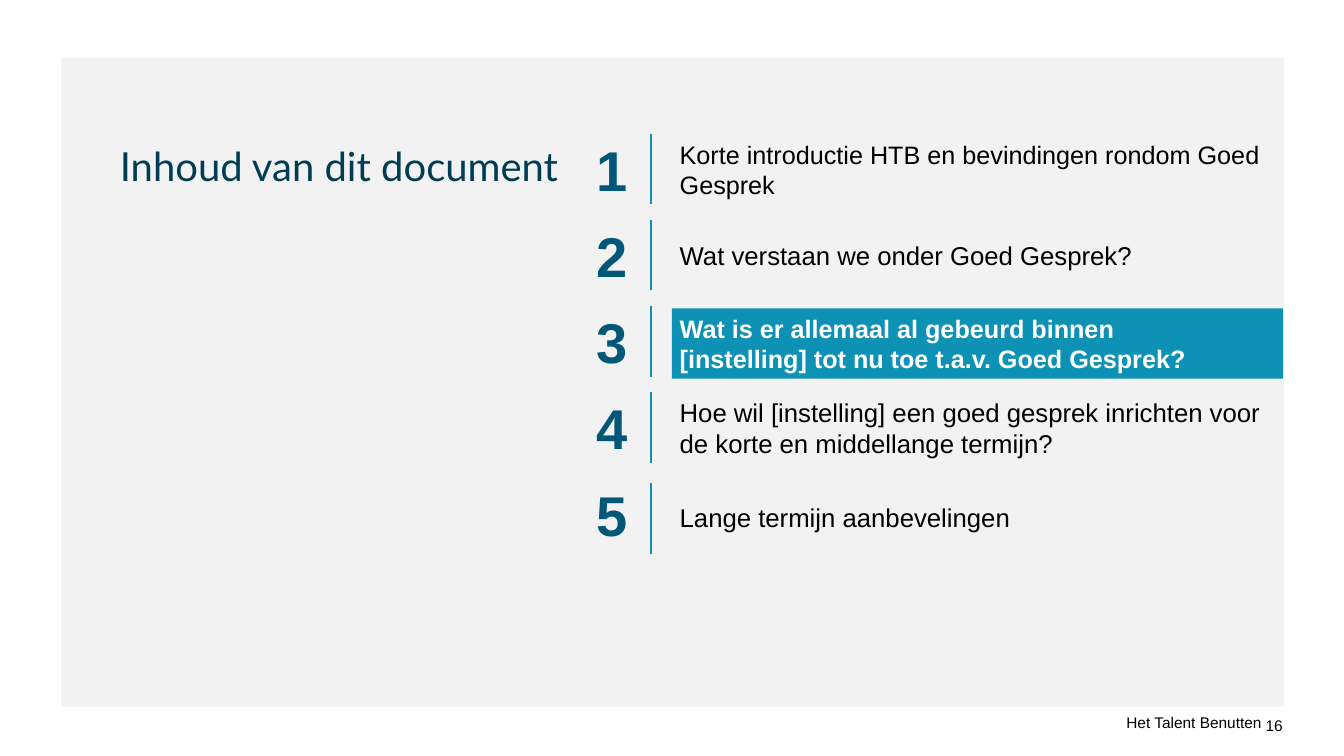
import pptx
import pptx.dml.color
import pptx.enum.shapes
import pptx.enum.text
import pptx.oxml
import pptx.util
from pptx.util import Cm

COLOURS = {
    "panel": "F2F2F2",
    "title": "003C54",
    "number": "005777",
    "accent": "0D92B6",
    "text": "000000",
    "active": "FFFFFF",
}
HARD_SPACE = chr(160)
TITLE = "Inhoud van dit document"
FOOTER = "Het Talent Benutten"
PAGE_NUMBER = "16"
ACTIVE_CHAPTER = 3
CHAPTERS = [
    {"text": "Korte introductie HTB en bevindingen rondom Goed Gesprek", "size": 18},
    {"text": "Wat verstaan we onder Goed Gesprek?", "size": 18.4},
    {"text": f"Wat is er allemaal al gebeurd{HARD_SPACE}binnen "
             f"[instelling]{HARD_SPACE}tot nu toe t.a.v. Goed Gesprek?",
     "size": 18, "label_drop": 0.05},
    {"text": "Hoe wil [instelling] een goed gesprek inrichten voor de korte en middellange termijn?",
     "size": 18.4},
    {"text": "Lange termijn aanbevelingen", "size": 18.4, "label_drop": 0.1, "line_drop": 0.12},
]

FIRST_TOP = 3.38
PITCH = 2.17
ROW_HEIGHT = 1.77
NUMBER_LEFT, NUMBER_WIDTH, NUMBER_HEIGHT = 14.8, 1.25, 1.35
LINE_LEFT = 16.41
LABEL_LEFT, LABEL_WIDTH = 16.93, 15.4

ALIGN = pptx.enum.text.PP_ALIGN
ANCHOR = pptx.enum.text.MSO_ANCHOR


def colour(name):
    return pptx.dml.color.RGBColor.from_string(COLOURS[name])


def write(shape, text, size, ink, font="Arial", bold=False, align=ALIGN.LEFT,
          anchor=ANCHOR.MIDDLE, inset=0, wrap=True):
    frame = shape.text_frame
    frame.text = text
    frame.word_wrap = wrap
    frame.auto_size = pptx.enum.text.MSO_AUTO_SIZE.NONE
    frame.vertical_anchor = anchor
    frame.margin_left = frame.margin_right = Cm(inset)
    frame.margin_top = frame.margin_bottom = Cm(inset)
    para = frame.paragraphs[0]
    para.alignment = align
    for span in para.runs:
        span.font.name = font
        span.font.size = pptx.util.Pt(size)
        span.font.bold = bold
        span.font.color.rgb = colour(ink)


def add_block(page, left, top, width, height, fill):
    block = page.shapes.add_shape(pptx.enum.shapes.MSO_SHAPE.RECTANGLE,
                                  Cm(left), Cm(top), Cm(width), Cm(height))
    block.shadow.inherit = False
    block.fill.solid()
    block.fill.fore_color.rgb = colour(fill)
    block.line.fill.background()
    return block


def add_box(page, left, top, width, height):
    return page.shapes.add_textbox(Cm(left), Cm(top), Cm(width), Cm(height))


def add_divider(page, top):
    divider = page.shapes.add_connector(
        pptx.enum.shapes.MSO_CONNECTOR.STRAIGHT,
        Cm(LINE_LEFT), Cm(top + ROW_HEIGHT), Cm(LINE_LEFT), Cm(top))
    divider.line.color.rgb = colour("accent")
    divider.line.width = pptx.util.Pt(1.5)
    properties = divider._element.spPr
    properties.append(pptx.oxml.parse_xml(
        '<a:effectLst xmlns:a="http://schemas.openxmlformats.org/drawingml/2006/main"/>'))


def add_chapter(page, number, chapter):
    top = FIRST_TOP + (number - 1) * PITCH
    number_top = top + (ROW_HEIGHT - NUMBER_HEIGHT) / 2
    number_box = add_box(page, NUMBER_LEFT, number_top, NUMBER_WIDTH, NUMBER_HEIGHT)
    write(number_box, str(number), 40, "number", bold=True, align=ALIGN.CENTER, wrap=False)
    add_divider(page, top + chapter.get("line_drop", 0))
    place = (LABEL_LEFT, top + chapter.get("label_drop", 0), LABEL_WIDTH, ROW_HEIGHT)
    active = number == ACTIVE_CHAPTER
    label = add_block(page, *place, "accent") if active else add_box(page, *place)
    write(label, chapter["text"], chapter["size"], "active" if active else "text",
          bold=active, inset=0.2)


def main():
    deck = pptx.Presentation()
    deck.slide_width, deck.slide_height = Cm(33.87), Cm(19.05)
    page = deck.slides.add_slide(deck.slide_layouts[5])

    panel = add_block(page, 1.55, 1.45, 30.81, 16.36, "panel")
    title = page.shapes.title
    title._element.addprevious(panel._element)
    title.left, title.top, title.width, title.height = Cm(3.02), Cm(3.56), Cm(11.13), Cm(1.07)
    write(title, TITLE, 28.6, "title", font="Lato", anchor=ANCHOR.TOP)

    for number, chapter in enumerate(CHAPTERS, 1):
        add_chapter(page, number, chapter)

    footer = add_box(page, 27.7, 17.96, 4.1, 0.48)
    write(footer, FOOTER, 11, "text", align=ALIGN.RIGHT, anchor=ANCHOR.BOTTOM)
    page_number = add_box(page, 31.85, 18.03, 0.48, 0.48)
    write(page_number, PAGE_NUMBER, 11, "text", align=ALIGN.RIGHT, wrap=False)

    deck.save("out.pptx")


if __name__ == "__main__":
    main()
